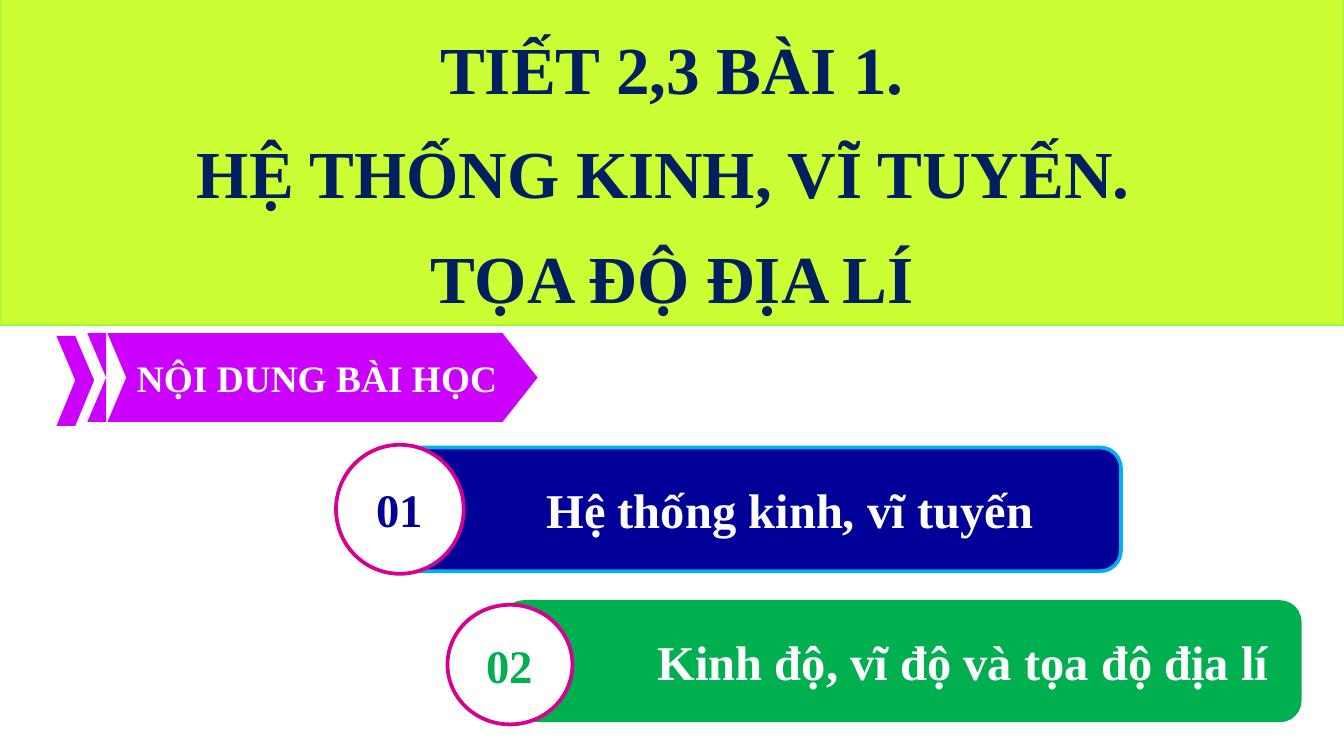
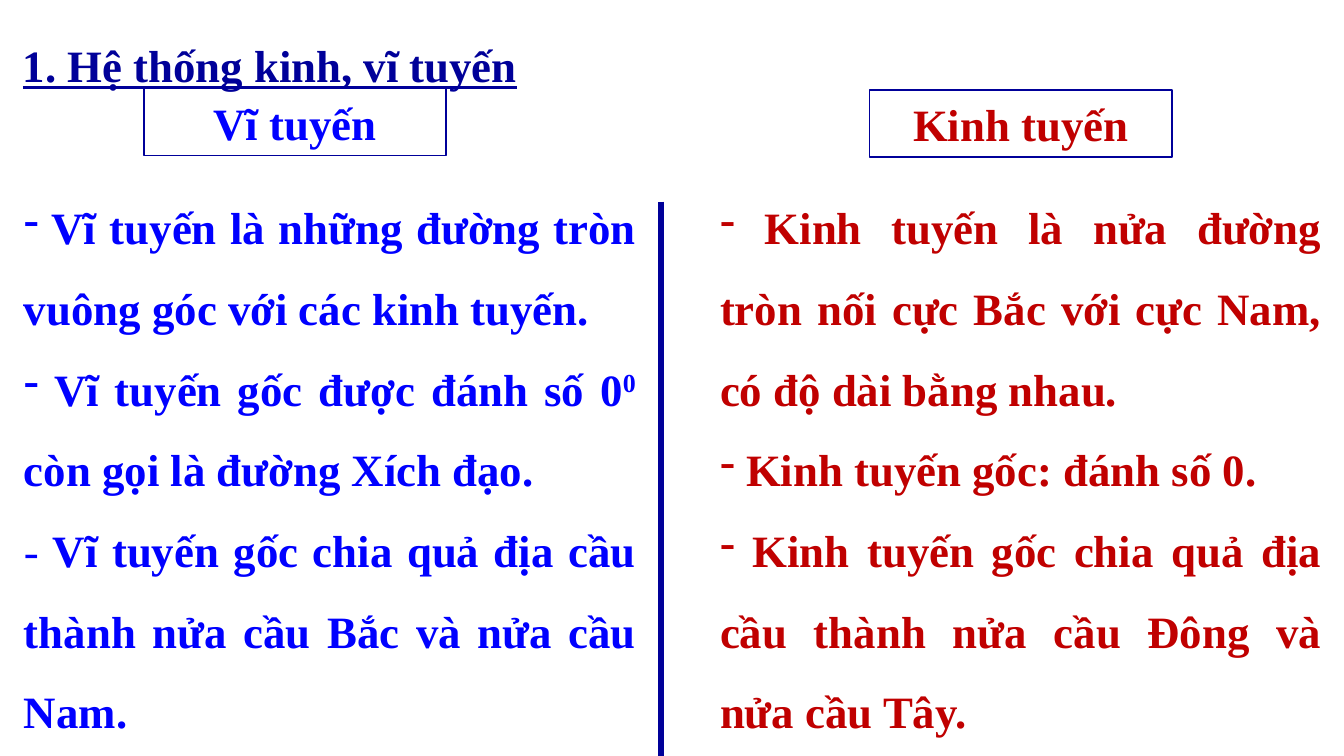
import pptx
import pptx.util
import pptx.dml.color
import pptx.enum.shapes
import pptx.enum.text
import pptx.oxml.ns
import lxml.etree

RGB = pptx.dml.color.RGBColor
NAVY = RGB(0x00, 0x00, 0x99)
INK = RGB(0x00, 0x20, 0x60)
LIME = RGB(0xCC, 0xFF, 0x33)
LEAF = RGB(0x99, 0xFF, 0x33)
GREEN = RGB(0x00, 0xB0, 0x50)
SKY = RGB(0x00, 0xB0, 0xF0)
PINK = RGB(0xD6, 0x00, 0x93)
PURPLE = RGB(0xCC, 0x00, 0xFF)
BLUE = RGB(0x00, 0x00, 0xFF)
RED = RGB(0xC0, 0x00, 0x00)
WHITE = RGB(0xFF, 0xFF, 0xFF)

FACE = "Times New Roman"
WIDE = 10
HIGH = WIDE * 9 / 16
KIND = pptx.enum.shapes.MSO_SHAPE
ALIGN = pptx.enum.text.PP_ALIGN
ANCHOR = pptx.enum.text.MSO_ANCHOR
FIT = pptx.enum.text.MSO_AUTO_SIZE
inch = pptx.util.Inches
point = pptx.util.Pt

LESSON = ["TIẾT 2,3 BÀI 1.", "HỆ THỐNG KINH, VĨ TUYẾN. ", "TỌA ĐỘ ĐỊA LÍ"]
BANNER = "NỘI DUNG BÀI HỌC"
ARROWS = [
    ([(0.42, 2.5), (0.56, 2.5), (0.7, 2.83), (0.56, 3.17), (0.42, 3.17), (0.56, 2.83)], ""),
    ([(0.65, 2.48), (0.79, 2.48), (0.79, 3.14), (0.65, 3.14), (0.79, 2.81)], ""),
    ([(0.8, 2.48), (3.74, 2.48), (4, 2.81), (3.74, 3.14), (0.8, 3.14), (0.94, 2.81)], BANNER),
]
TOPICS = [
    ("02", "Kinh độ, vĩ độ và tọa độ địa lí", GREEN, GREEN,
     (3.75, 4.48, 5.92, 0.88), (3.33, 4.5, 0.93, 0.89)),
    ("01", "Hệ thống kinh, vĩ tuyến", NAVY, SKY,
     (2.92, 3.33, 5.42, 0.92), (2.5, 3.31, 0.95, 0.96)),
]

HEAD = "1. Hệ thống kinh, vĩ tuyến"
SIDES = [
    ("Kinh tuyến", RED, (6.47, 0.67), (5.26, 4.67), [
        ("-", [" Kinh tuyến là nửa đường tròn nối cực Bắc với cực Nam, có độ dài bằng nhau."]),
        ("-", [" Kinh tuyến gốc: đánh số 0."]),
        ("-", [" Kinh tuyến gốc chia quả địa cầu thành nửa cầu Đông và nửa cầu Tây."]),
    ]),
    ("Vĩ tuyến", BLUE, (1.07, 0.66), (0.08, 4.75), [
        ("-", [" Vĩ tuyến là những đường tròn vuông góc với các kinh tuyến."]),
        ("-", [" Vĩ tuyến gốc được đánh số 0", ("0", {"raise": 30000}),
               " còn gọi là đường Xích đạo."]),
        ("", [("-", {"bold": False}),
              " Vĩ tuyến gốc chia quả địa cầu thành nửa cầu Bắc và nửa cầu Nam."]),
    ]),
]


def assign(part, vals):
    for key, val in vals.items():
        setattr(part, key, val)


def place(shape, box):
    assign(shape, dict(zip(("left", "top", "width", "height"), map(inch, box))))


def paint(shape, fill, edge=None, thick=0.75):
    shape.fill.solid()
    shape.fill.fore_color.rgb = fill
    if edge is None:
        shape.line.fill.background()
    else:
        shape.line.color.rgb = edge
        shape.line.width = point(thick)


def mark(para, sign):
    props = para._p.get_or_add_pPr()
    for key in ("marL", "indent"):
        props.set(key, "0")
    tag = pptx.oxml.ns.qn
    lxml.etree.SubElement(props, tag("a:buFontTx"))
    lxml.etree.SubElement(props, tag("a:buChar")).set("char", sign)


def write(shape, paras, size, color, align, frame=None, space=None, **font):
    body = shape.text_frame
    assign(body, {"word_wrap": True, **(frame or {})})
    for spot, (sign, runs) in enumerate(paras):
        para = body.add_paragraph() if spot else body.paragraphs[0]
        para.alignment = align
        if space:
            para.line_spacing = space
        if sign:
            mark(para, sign)
        for item in runs:
            text, own = (item, {}) if isinstance(item, str) else item
            look = {"name": FACE, "size": point(size), "bold": True, **font, **own}
            lift = look.pop("raise", None)
            run = para.add_run()
            run.text = text
            assign(run.font, look)
            run.font.color.rgb = color
            if lift:
                run._r.get_or_add_rPr().set("baseline", str(lift))


def plain(*lines):
    return [("", [line]) for line in lines]


def shape(slide, kind, box, *look):
    part = slide.shapes.add_shape(kind, *map(inch, box))
    part.shadow.inherit = False
    paint(part, *look)
    return part


def outline(slide, dots):
    pen = slide.shapes.build_freeform(*map(inch, dots[0]), scale=1.0)
    pen.add_line_segments([tuple(map(inch, dot)) for dot in dots[1:]], close=True)
    part = pen.convert_to_shape()
    part.shadow.inherit = False
    paint(part, PURPLE)
    return part


def cover(deck):
    slide = deck.slides.add_slide(deck.slide_layouts[5])
    mid = {"vertical_anchor": ANCHOR.MIDDLE}
    title = slide.shapes.title
    place(title, (0, -0.04, WIDE, 2.46))
    paint(title, LIME, LEAF)
    write(title, plain(*LESSON), 36, INK, ALIGN.CENTER,
          {**mid, "auto_size": FIT.NONE}, 1.3)
    for _, text, fill, edge, bar, _ in TOPICS:
        part = shape(slide, KIND.ROUNDED_RECTANGLE, bar, fill, edge, 2)
        write(part, plain(text), 26, WHITE, ALIGN.JUSTIFY,
              {**mid, "margin_left": inch(1.1)})
    for dots, text in ARROWS:
        part = outline(slide, dots)
        if text:
            write(part, plain(text), 20, WHITE, ALIGN.CENTER,
                  {**mid, "word_wrap": False,
                   "margin_left": 0, "margin_right": inch(0.08)})
    for num, _, fill, _, _, disc in reversed(TOPICS):
        part = shape(slide, KIND.FLOWCHART_CONNECTOR, disc, WHITE, PINK, 2)
        write(part, plain(num), 25, fill, ALIGN.CENTER, mid)


def compare(deck):
    slide = deck.slides.add_slide(deck.slide_layouts[5])
    rule = slide.shapes.add_connector(
        pptx.enum.shapes.MSO_CONNECTOR.STRAIGHT,
        *map(inch, (4.92, 1.5, 4.92, HIGH)))
    rule.line.color.rgb = NAVY
    rule.line.width = point(3)
    lxml.etree.SubElement(rule.element.spPr, pptx.oxml.ns.qn("a:effectLst"))
    top = {"vertical_anchor": ANCHOR.TOP}
    for name, color, spot, _, _ in SIDES:
        part = shape(slide, KIND.RECTANGLE, (*spot, 2.25, 0.5), WHITE, NAVY)
        write(part, plain(name), 24, color, ALIGN.CENTER, top)
    for _, color, _, (left, width), paras in reversed(SIDES):
        part = slide.shapes.add_textbox(*map(inch, (left, 1.24, width, 4.27)))
        write(part, paras, 24, color, ALIGN.JUSTIFY, top, 1.5)
    title = slide.shapes.title
    place(title, (0.07, 0.23, 4.25, 0.5))
    write(title, plain(HEAD), 24, NAVY, ALIGN.LEFT,
          {**top, "auto_size": FIT.NONE}, underline=True)
    title.element.getparent().append(title.element)


def main():
    deck = pptx.Presentation()
    deck.slide_width, deck.slide_height = inch(WIDE), inch(HIGH)
    cover(deck)
    compare(deck)
    deck.save("out.pptx")


if __name__ == "__main__":
    main()
